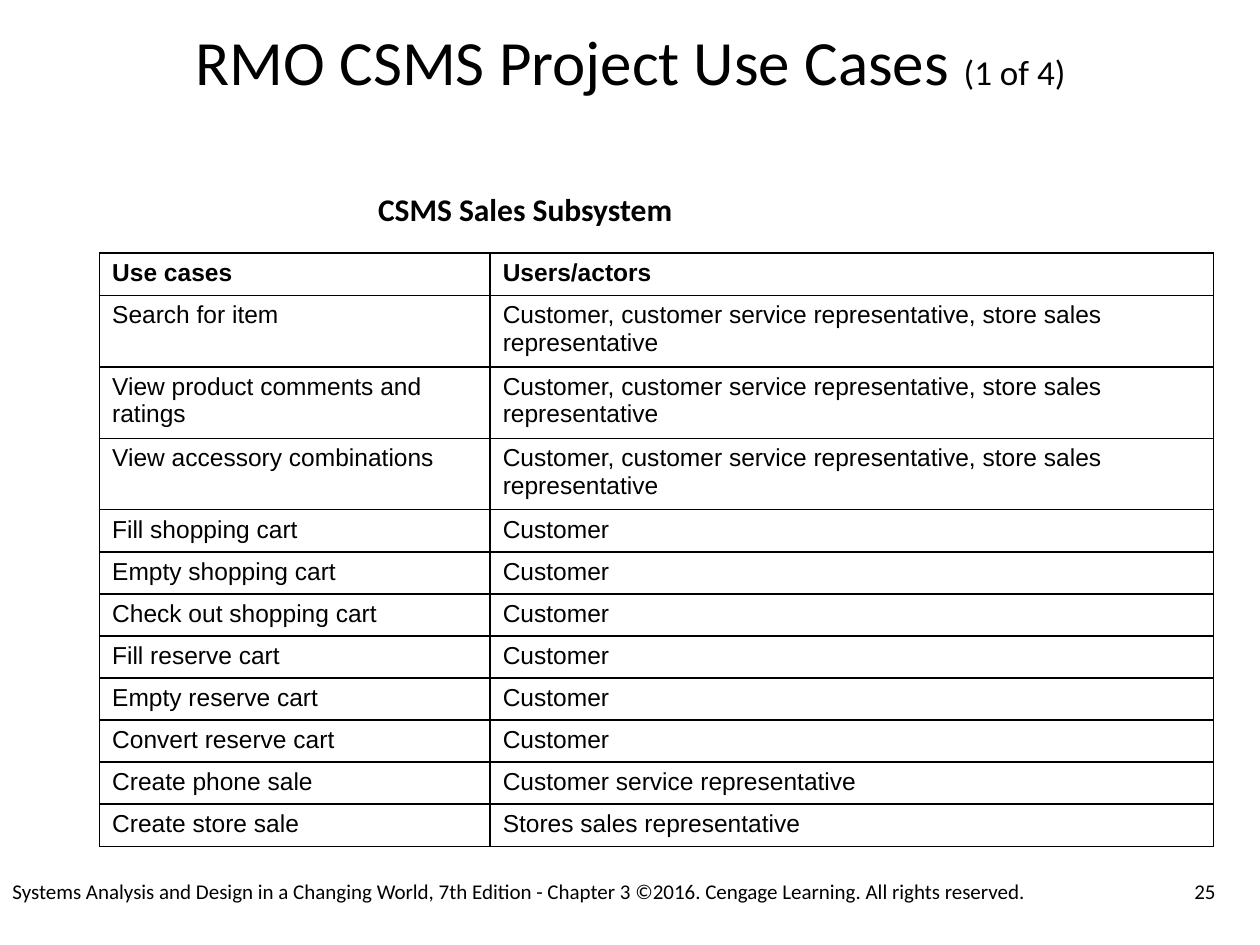
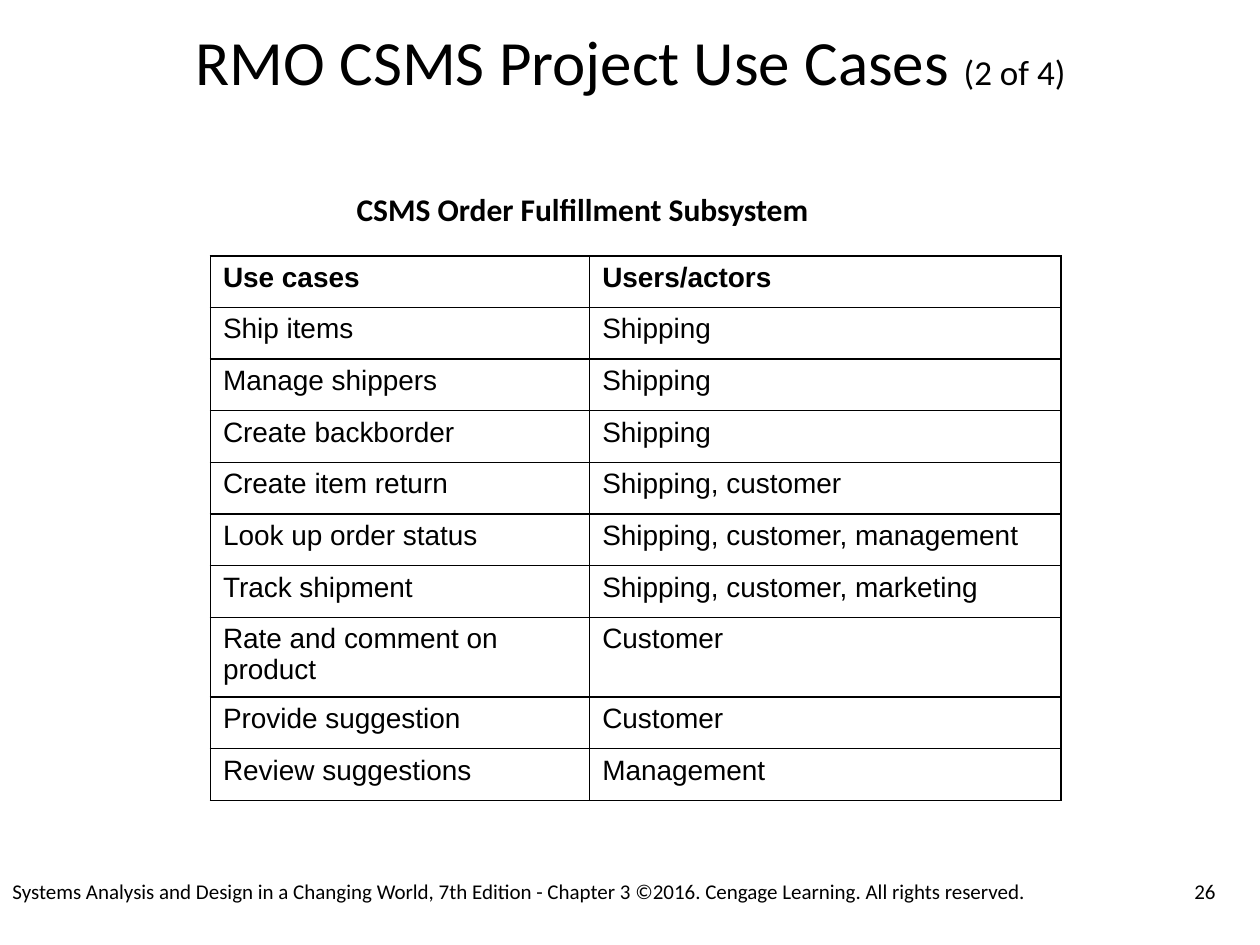
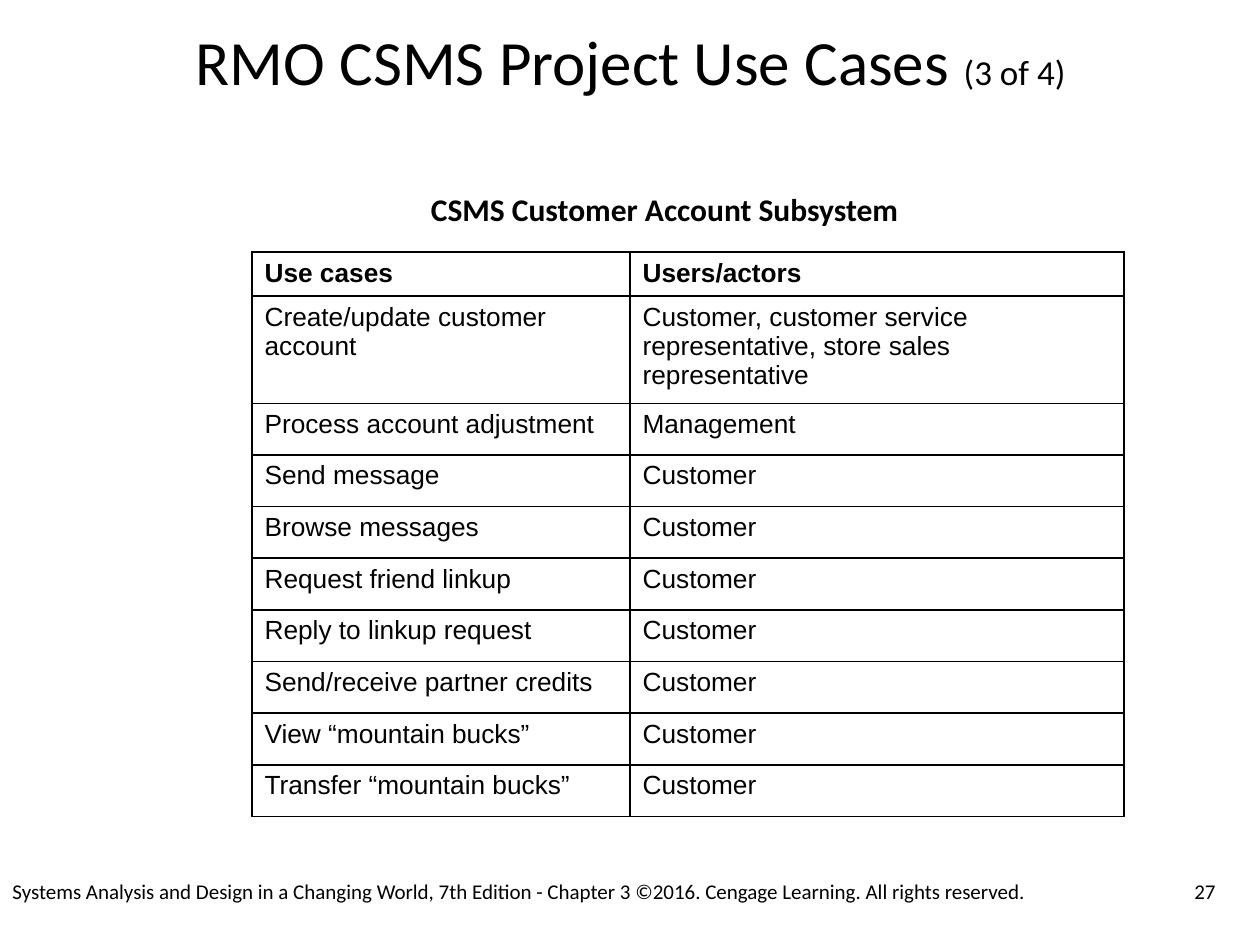
from lxml import etree
from pptx import Presentation
from pptx.dml.color import RGBColor
from pptx.enum.text import MSO_ANCHOR, MSO_AUTO_SIZE as FIT, PP_ALIGN
from pptx.oxml.ns import qn
from pptx.util import Inches, Pt

COLORS = {"text": "000000", "border": "000000", "background": "FFFFFF"}
TITLE_FONT, TABLE_FONT = "Calibri", "Arial"
FOOTER = ("Systems Analysis and Design in a Changing World, 7th Edition - Chapter 3 "
          "©2016. Cengage Learning. All rights reserved.")
FIRST_NUMBER, PART_COUNT = 25, 4
HEADER = ("Use cases", "Users/actors")
ALL_REPS = "Customer, customer service representative, store sales representative"

SUBSYSTEMS = [
    {"name": "CSMS Sales Subsystem", "name_left": 3, "name_width": 2.42,
     "left": 0.79, "top": 2.01, "size": 14, "cols": (3.1, 5.74),
     "heights": [0.31] + [0.33] * 6 + [0.25, 0.28, 0.32, 0.33, 0.33],
     "rows": [
         ("Search for item", ALL_REPS),
         ("View product comments and ratings", ALL_REPS),
         ("View accessory combinations", ALL_REPS),
         ("Fill shopping cart", "Customer"),
         ("Empty shopping cart", "Customer"),
         ("Check out shopping cart", "Customer"),
         ("Fill reserve cart", "Customer"),
         ("Empty reserve cart", "Customer"),
         ("Convert reserve cart", "Customer"),
         ("Create phone sale", "Customer service representative"),
         ("Create store sale", "Stores sales representative")]},
    {"name": "CSMS Order Fulfillment Subsystem", "name_left": 2.83, "name_width": 4.08,
     "left": 1.67, "top": 2.03, "size": 16, "cols": (3.01, 3.74),
     "heights": [0.41] * 10,
     "rows": [
         ("Ship items", "Shipping"),
         ("Manage shippers", "Shipping"),
         ("Create backborder", "Shipping"),
         ("Create item return", "Shipping, customer"),
         ("Look up order status", "Shipping, customer, management"),
         ("Track shipment", "Shipping, customer, marketing"),
         ("Rate and comment on product", "Customer"),
         ("Provide suggestion", "Customer"),
         ("Review suggestions", "Management")]},
    {"name": "CSMS Customer Account Subsystem", "name_left": 3.42, "name_width": 4.42,
     "left": 2, "top": 2, "size": 15, "cols": (3, 3.92),
     "heights": [0.33] + [0.41] * 9,
     "rows": [
         ("Create/update customer account", ALL_REPS),
         ("Process account adjustment", "Management"),
         ("Send message", "Customer"),
         ("Browse messages", "Customer"),
         ("Request friend linkup", "Customer"),
         ("Reply to linkup request", "Customer"),
         ("Send/receive partner credits", "Customer"),
         ("View “mountain bucks”", "Customer"),
         ("Transfer “mountain bucks”", "Customer")]},
]


class Deck:
    """Holds the presentation, its style and the current slide."""

    def __init__(self):
        self.prs = Presentation()
        self.prs.slide_width, self.prs.slide_height = Inches(10), Inches(7.5)
        fill = self.prs.slide_master.background.fill
        fill.solid()
        fill.fore_color.rgb = RGBColor.from_string(COLORS["background"])

    def new_slide(self):
        self.s = self.prs.slides.add_slide(self.prs.slide_layouts[1])

    def run(self, p, text, size, font=TITLE_FONT, bold=False):
        r = p.add_run()
        r.text = text
        r.font.size, r.font.name, r.font.bold = Pt(size), font, bold
        r.font.color.rgb = RGBColor.from_string(COLORS["text"])

    def place(self, sp, left, top, width, height):
        """Moves a placeholder, removes its insets and returns its first paragraph."""
        sp.left, sp.top, sp.width, sp.height = map(Inches, (left, top, width, height))
        tf = sp.text_frame
        tf.margin_left = tf.margin_top = tf.margin_right = tf.margin_bottom = 0
        tf.vertical_anchor, tf.auto_size = MSO_ANCHOR.TOP, FIT.SHAPE_TO_FIT_TEXT
        p = tf.paragraphs[0]
        p.line_spacing, p.space_before = 0.9, Pt(0)
        return p

    def title(self, text, part):
        p = self.place(self.s.shapes.title, 0.42, 0.25, 9.17, 0.55)
        p.alignment = PP_ALIGN.CENTER
        self.run(p, text + " ", 36)
        self.run(p, part, 20)

    def subtitle(self, text, left, width):
        p = self.place(self.s.placeholders[1], left, 1.54, width, 0.27)
        pPr = p._p.get_or_add_pPr()
        pPr.set("marL", "0")
        pPr.set("indent", "0")
        etree.SubElement(pPr, qn("a:buNone"))
        self.run(p, text, 18, bold=True)

    def label(self, text, left, width, wrap):
        sp = self.s.shapes.add_textbox(Inches(left), Inches(6.92), Inches(width), Inches(0.3))
        tf = sp.text_frame
        tf.word_wrap, tf.auto_size = wrap, FIT.SHAPE_TO_FIT_TEXT
        self.run(tf.paragraphs[0], text, 12)

    def footer(self, number):
        self.label(FOOTER, 0, 8.42, True)
        self.label(str(number), 9.38, 0.41, False)

    def border(self, cell):
        tcPr = cell._tc.get_or_add_tcPr()
        for side in ("lnL", "lnR", "lnT", "lnB"):
            ln = etree.SubElement(tcPr, qn(f"a:{side}"), w=str(Pt(1)))
            fill = etree.SubElement(ln, qn("a:solidFill"))
            etree.SubElement(fill, qn("a:srgbClr"), val=COLORS["border"])

    def table(self, rows, left, top, cols, heights, size):
        table = self.s.shapes.add_table(
            len(rows), len(cols), Inches(left), Inches(top),
            Inches(sum(cols)), Inches(sum(heights))).table
        table.first_row = table.horz_banding = False
        for column, width in zip(table.columns, cols):
            column.width = Inches(width)
        for i, (row, height, texts) in enumerate(zip(table.rows, heights, rows)):
            row.height = Inches(height)
            for cell, text in zip(row.cells, texts):
                self.border(cell)
                cell.fill.background()
                self.run(cell.text_frame.paragraphs[0], text, size, TABLE_FONT, i == 0)


def main():
    deck = Deck()
    for i, sub in enumerate(SUBSYSTEMS):
        deck.new_slide()
        deck.footer(FIRST_NUMBER + i)
        deck.title("RMO CSMS Project Use Cases", f"({i + 1} of {PART_COUNT})")
        deck.subtitle(sub["name"], sub["name_left"], sub["name_width"])
        deck.table([HEADER] + sub["rows"], sub["left"], sub["top"],
                   sub["cols"], sub["heights"], sub["size"])
    deck.prs.save("out.pptx")


if __name__ == "__main__":
    main()
